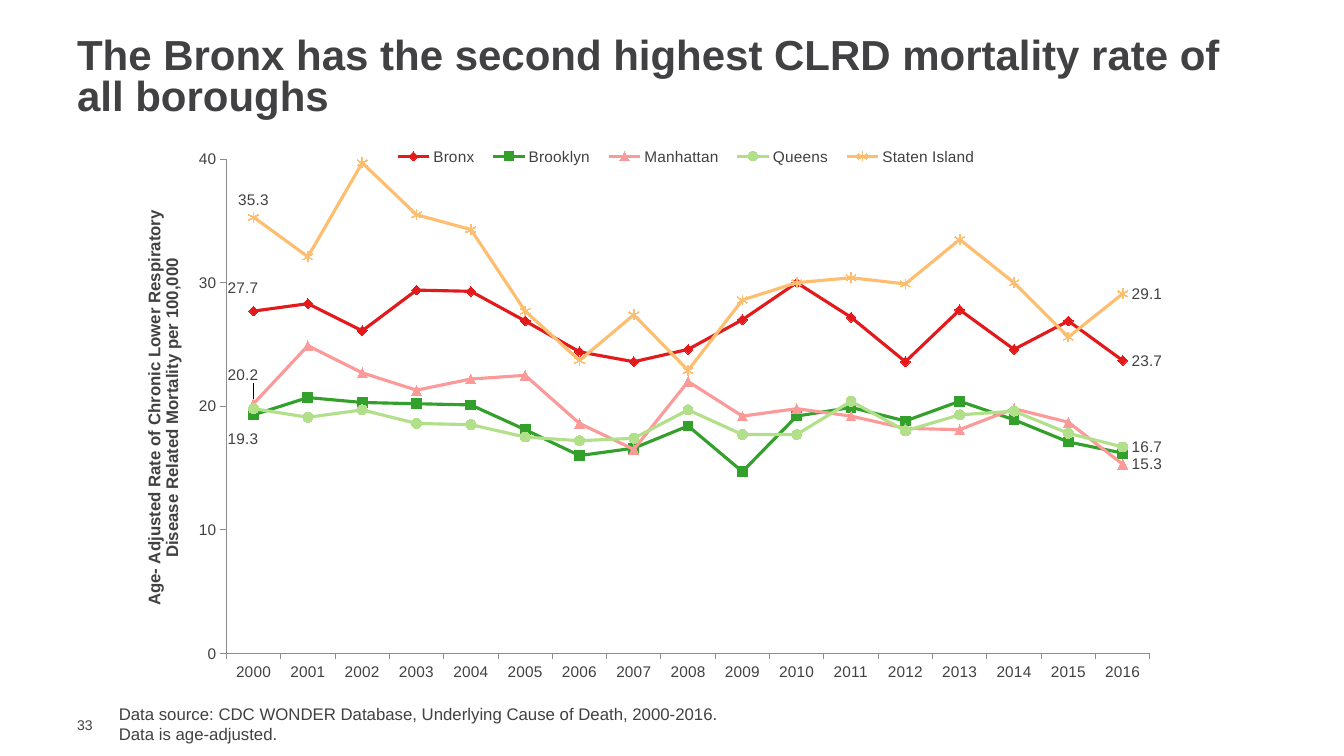
from lxml import etree
from pptx import Presentation
from pptx.chart.data import CategoryChartData
from pptx.dml.color import RGBColor
from pptx.enum.chart import XL_CHART_TYPE, XL_LABEL_POSITION, XL_LEGEND_POSITION, XL_MARKER_STYLE, XL_TICK_MARK
from pptx.enum.text import MSO_ANCHOR
from pptx.oxml.ns import qn
from pptx.util import Inches, Pt

LINE_MARKERS = XL_CHART_TYPE.LINE_MARKERS
ABOVE, BELOW, RIGHT = XL_LABEL_POSITION.ABOVE, XL_LABEL_POSITION.BELOW, XL_LABEL_POSITION.RIGHT
TOP = XL_LEGEND_POSITION.TOP
MARKER = XL_MARKER_STYLE
OUTSIDE, NO_TICK = XL_TICK_MARK.OUTSIDE, XL_TICK_MARK.NONE
MIDDLE, ANCHOR_TOP = MSO_ANCHOR.MIDDLE, MSO_ANCHOR.TOP

FONT, INK, AXIS = "Arial", "414042", "8C8C8C"
WIDTH, HEIGHT = 13.33, 7.5
YEARS = [str(year) for year in range(2000, 2017)]
FIRST, LAST = 0, len(YEARS) - 1

BOROUGHS = [
    ("Bronx", "E31A1C", MARKER.DIAMOND,
     [27.7, 28.3, 26.1, 29.4, 29.3, 26.9, 24.4, 23.6, 24.6, 27, 30, 27.2, 23.6, 27.8, 24.6, 26.9, 23.7],
     {FIRST: (ABOVE, (-0.01, -0.01)), LAST: (RIGHT, None)}),
    ("Brooklyn", "33A02C", MARKER.SQUARE,
     [19.3, 20.7, 20.3, 20.2, 20.1, 18.1, 16, 16.6, 18.4, 14.7, 19.2, 19.9, 18.8, 20.4, 18.9, 17.1, 16.2],
     {FIRST: (BELOW, (-0.01, 0.01))}),
    ("Manhattan", "FB9A99", MARKER.TRIANGLE,
     [20.2, 24.9, 22.7, 21.3, 22.2, 22.5, 18.6, 16.5, 22, 19.2, 19.8, 19.2, 18.2, 18.1, 19.8, 18.7, 15.3],
     {FIRST: (ABOVE, (-0.01, -0.02)), LAST: (RIGHT, None)}),
    ("Queens", "B2DF8A", MARKER.CIRCLE,
     [19.8, 19.1, 19.7, 18.6, 18.5, 17.5, 17.2, 17.4, 19.7, 17.7, 17.7, 20.4, 18, 19.3, 19.6, 17.8, 16.7],
     {LAST: (RIGHT, None)}),
    ("Staten Island", "FDBF6F", MARKER.STAR,
     [35.3, 32.1, 39.7, 35.5, 34.3, 27.7, 23.7, 27.4, 22.9, 28.6, 30, 30.4, 29.9, 33.5, 30, 25.6, 29.1],
     {FIRST: (ABOVE, None), LAST: (RIGHT, None)}),
]


def rgb(value):
    return RGBColor.from_string(value)


def set_font(font, size, bold=False):
    font.name, font.size, font.bold = FONT, Pt(size), bold
    font.color.rgb = rgb(INK)


def box(x, y, w, h):
    return [Inches(share * side) for share, side in zip((x, y, w, h), (WIDTH, HEIGHT) * 2)]


def add_text(slide, place, lines, size, bold=False, anchor=ANCHOR_TOP, pad=0.05, spacing=1.0):
    tf = slide.shapes.add_textbox(*box(*place)).text_frame
    tf.word_wrap = True
    tf.vertical_anchor = anchor
    tf.margin_left = Inches(0.1)
    tf.margin_right = Inches(2 * pad)
    tf.margin_top = tf.margin_bottom = Inches(pad)
    for i, line in enumerate(lines):
        p = tf.paragraphs[0] if i == 0 else tf.add_paragraph()
        p.text = line
        p.line_spacing = spacing
        set_font(p.font, size, bold)


def set_layout(parent, after, **values):
    for old in parent.findall(qn("c:layout")):
        parent.remove(old)
    layout = etree.Element(qn("c:layout"))
    manual = etree.SubElement(layout, qn("c:manualLayout"))
    for tag, value in values.items():
        etree.SubElement(manual, qn("c:" + tag)).set("val", str(value))
    if after:
        parent.find(qn(after)).addnext(layout)
    else:
        parent.insert(0, layout)


def style_axis(axis):
    axis.has_major_gridlines = False
    axis.major_tick_mark, axis.minor_tick_mark = OUTSIDE, NO_TICK
    axis.format.line.color.rgb = rgb(AXIS)
    axis.format.line.width = Pt(0.75)
    set_font(axis.tick_labels.font, 11)


def style_value_axis(axis, title):
    style_axis(axis)
    axis.minimum_scale, axis.maximum_scale, axis.major_unit = 0, 40, 10
    axis.tick_labels.number_format = "0"
    axis.tick_labels.number_format_is_linked = False
    tf = axis.axis_title.text_frame
    tf.text = title
    set_font(tf.paragraphs[0].font, 12, True)
    body = tf._txBody.bodyPr
    body.set("rot", "-5400000")
    body.set("vert", "horz")
    set_layout(axis.axis_title._element, "c:tx", xMode="edge", yMode="edge", x=0.03, y=0.13)


def style_series(series, color, marker, labels):
    series.smooth = False
    series.format.line.color.rgb = rgb(color)
    series.format.line.width = Pt(2.25)
    series.marker.style, series.marker.size = marker, 7
    series.marker.format.fill.solid()
    series.marker.format.fill.fore_color.rgb = rgb(color)
    series.marker.format.line.color.rgb = rgb(color)
    series.data_labels.show_value = False
    for index, (position, shift) in labels.items():
        label = series.points[index].data_label
        set_font(label.font, 11)
        label.position = position
        if shift:
            item = series._element.xpath(f'c:dLbls/c:dLbl[c:idx/@val="{index}"]')[0]
            set_layout(item, "c:idx", x=shift[0], y=shift[1])


def add_line_chart(slide, place, title):
    data = CategoryChartData()
    data.categories = YEARS
    for name, _, _, values, _ in BOROUGHS:
        data.add_series(name, values)
    chart = slide.shapes.add_chart(LINE_MARKERS, *box(*place), data).chart
    set_font(chart.font, 18)
    chart.has_title = False
    chart.has_legend = True
    chart.legend.position = TOP
    chart.legend.include_in_layout = False
    set_font(chart.legend.font, 11)
    set_layout(chart.legend._element, "c:legendPos", xMode="edge", yMode="edge", x=0.26, y=0.02, w=0.57, h=0.04)
    plot = chart.plots[0]
    plot.vary_by_categories = False
    set_layout(chart._chartSpace.chart.plotArea, None, layoutTarget="inner",
               xMode="edge", yMode="edge", x=0.111, y=0.045, w=0.872, h=0.875)
    style_axis(chart.category_axis)
    style_value_axis(chart.value_axis, title)
    for series, (_, color, marker, _, labels) in zip(plot.series, BOROUGHS):
        style_series(series, color, marker, labels)


def main():
    prs = Presentation()
    prs.slide_width, prs.slide_height = Inches(WIDTH), Inches(HEIGHT)
    slide = prs.slides.add_slide(prs.slide_layouts[6])
    add_text(slide, (0.05, 0.947, 0.032, 0.023), ["33"], 10, anchor=MIDDLE, pad=0)
    add_text(slide, (0.05, 0.044, 0.9, 0.121),
             ["The Bronx has the second highest CLRD mortality rate of all boroughs"],
             30, bold=True, anchor=MIDDLE, spacing=0.8)
    add_text(slide, (0.081, 0.924, 0.728, 0.067),
             ["Data source: CDC WONDER Database, Underlying Cause of Death, 2000-2016.",
              "Data is age-adjusted."], 12)
    add_line_chart(slide, (0.081, 0.177, 0.788, 0.747),
                   "Age- Adjusted Rate of Chronic Lower Respiratory Disease Related Mortality per 100,000")
    prs.save("out.pptx")


if __name__ == "__main__":
    main()
